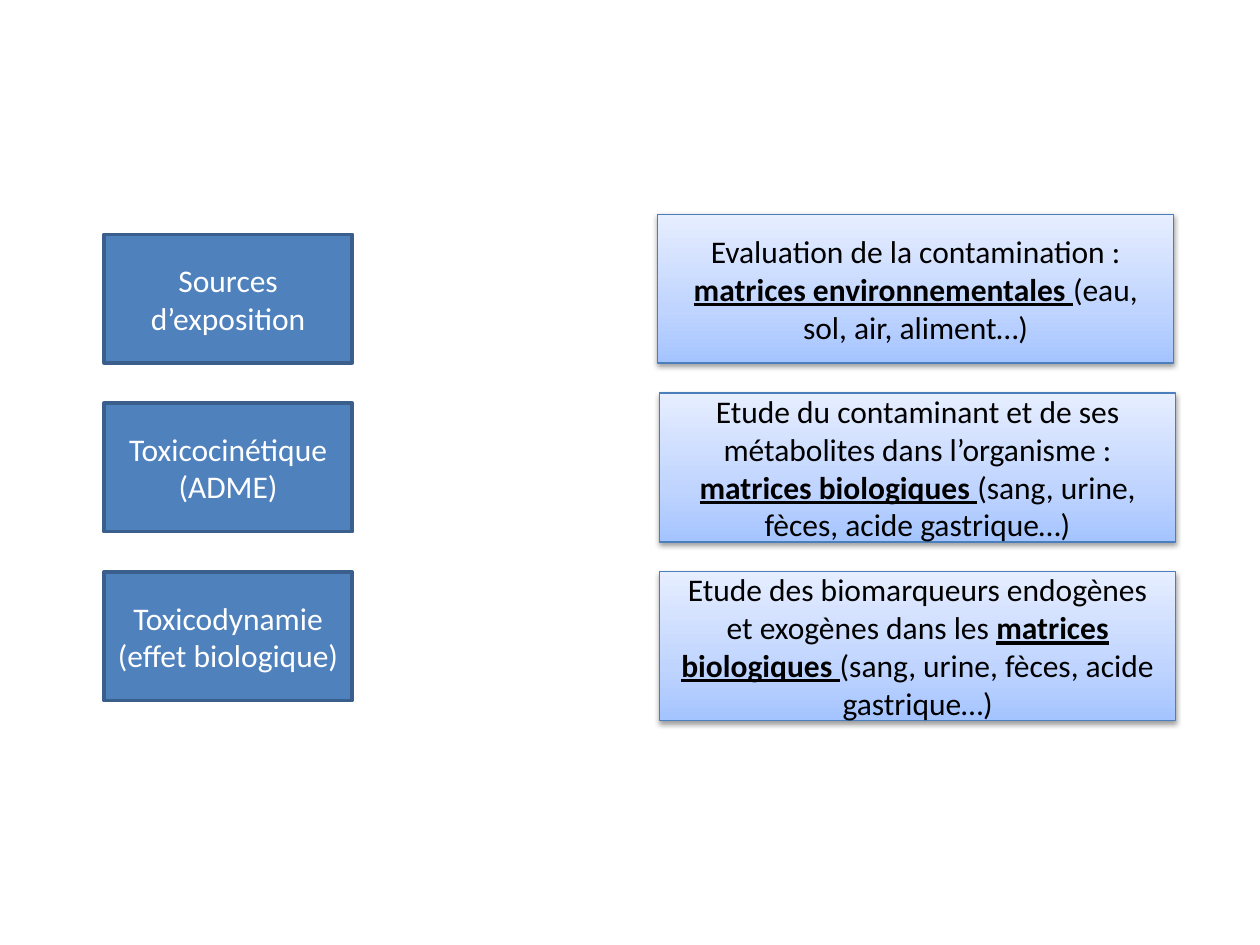
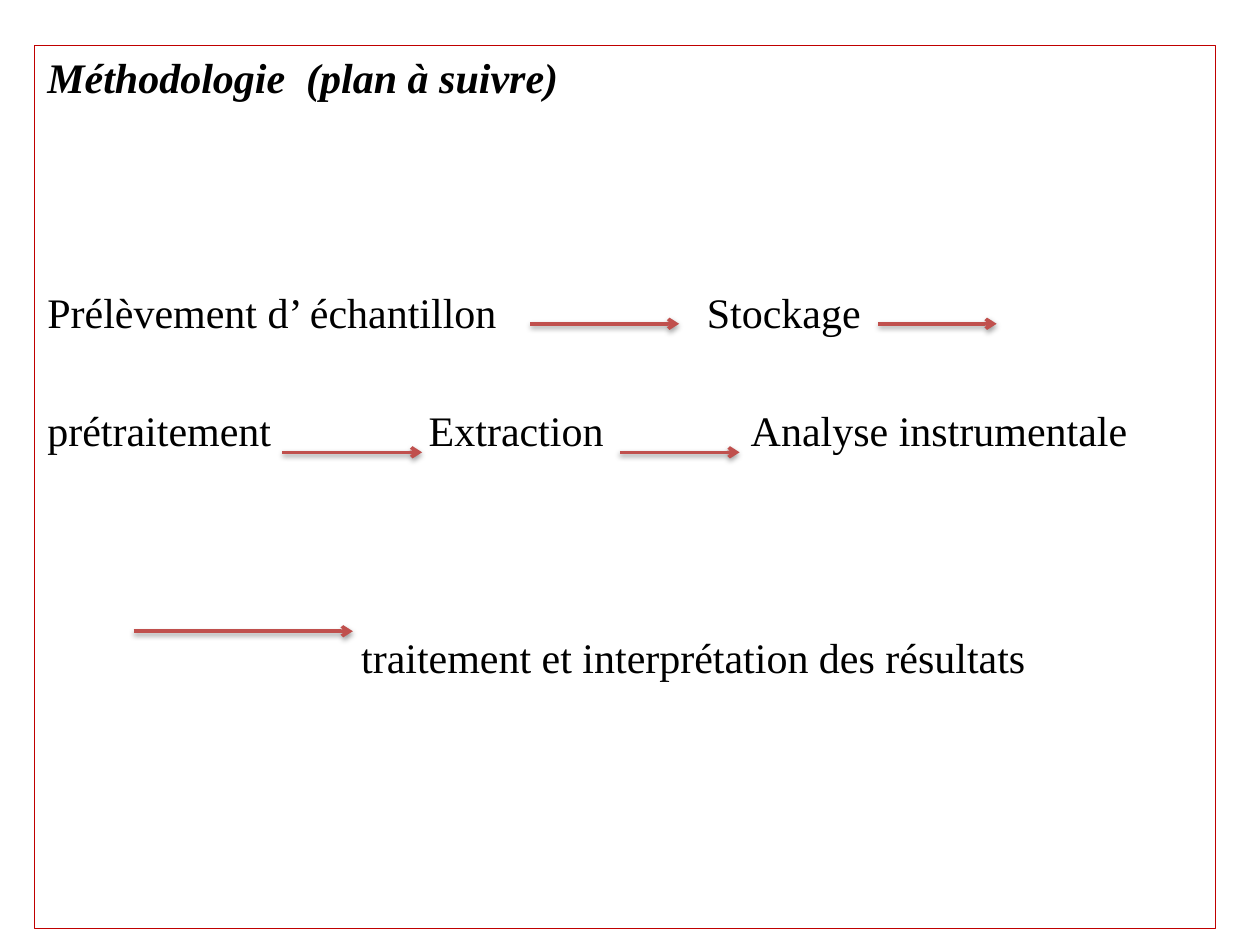
from dataclasses import dataclass

from pptx import Presentation
from pptx.dml.color import RGBColor
from pptx.enum.shapes import MSO_CONNECTOR, MSO_SHAPE
from pptx.enum.text import MSO_ANCHOR, MSO_AUTO_SIZE, PP_ALIGN
from pptx.oxml import parse_xml
from pptx.oxml.ns import nsdecls
from pptx.util import Inches, Pt

COLS, ROWS = 100, 75


@dataclass(frozen=True)
class Theme:
    white: str = "FFFFFF"
    ink: str = "000000"
    blue: str = "4F81BD"
    navy: str = "3A5F8C"
    edge: str = "4B7EBC"
    red: str = "C00000"
    arrow: str = "C0504D"
    fade: tuple = ((0, "A4C4FF"), (35, "BFD4FF"), (100, "E6EEFF"))
    sans: str = "Calibri"
    serif: str = "Times New Roman"
    small: int = 18
    large: int = 24
    thin: float = 0.75
    thick: float = 2


@dataclass(frozen=True)
class Stage:
    name: str
    lead: str
    matrix: str
    samples: str
    left: float
    top: float


@dataclass(frozen=True)
class Step:
    words: tuple
    before: float = 0
    gaps: tuple = ()
    indent: float = 0
    head: bool = False


@dataclass(frozen=True)
class Arrow:
    start: float
    end: float
    row: float


THEME = Theme()
FLUIDS = "(sang, urine, fèces, acide gastrique…)"
STAGES = (
    Stage("Sources d’exposition", "Evaluation de la contamination : ",
          "matrices environnementales ", "(eau, sol, air, aliment…)", 52.2, 17),
    Stage("Toxicocinétique (ADME)",
          "Etude du contaminant et de ses métabolites dans l’organisme : ",
          "matrices biologiques ", FLUIDS, 52.36, 31.2),
    Stage("Toxicodynamie (effet biologique)",
          "Etude des biomarqueurs endogènes et exogènes dans les ",
          "matrices biologiques ", FLUIDS, 52.36, 45.36),
)
STEPS = (
    Step(("Méthodologie  (plan à suivre)",), head=True),
    Step(("Prélèvement d’ échantillon", "Stockage"), 105.6, (114,)),
    Step(("prétraitement", "Extraction", "Analyse instrumentale"), 38.4, (84, 78)),
    Step(("traitement et interprétation des résultats",), 101, indent=24.9),
)
ARROWS = (
    Arrow(42.1, 53.9, 25.7),
    Arrow(69.7, 79.1, 25.7),
    Arrow(22.4, 33.5, 35.9),
    Arrow(49.2, 58.7, 35.9),
    Arrow(10.6, 28, 50.1),
)

deck = Presentation()
deck.slide_width, deck.slide_height = Inches(10), Inches(7.5)


def col(count: float) -> int:
    return round(deck.slide_width * count / COLS)


def row(count: float) -> int:
    return round(deck.slide_height * count / ROWS)


def ink(font, face: str, size: int, color: str) -> None:
    font.name, font.size = face, Pt(size)
    font.color.rgb = RGBColor.from_string(color)


def stroke(line, color: str, width: float) -> None:
    line.color.rgb = RGBColor.from_string(color)
    line.width = Pt(width)


def shade(shape) -> None:
    shape._element.spPr.append(parse_xml(
        f'<a:effectLst {nsdecls("a")}><a:outerShdw blurRad="{Pt(3.1)}" '
        f'dist="{Pt(1.6)}" dir="5400000" rotWithShape="0">'
        f'<a:srgbClr val="{THEME.ink}"><a:alpha val="38000"/></a:srgbClr>'
        '</a:outerShdw></a:effectLst>'))


def blend(shape) -> None:
    stops = "".join(f'<a:gs pos="{at * 1000}"><a:srgbClr val="{color}"/></a:gs>'
                    for at, color in THEME.fade)
    shape._element.spPr.prstGeom.addnext(parse_xml(
        f'<a:gradFill {nsdecls("a")} rotWithShape="1"><a:gsLst>{stops}</a:gsLst>'
        '<a:lin ang="16200000" scaled="0"/></a:gradFill>'))


def card(slide, left: float, top: float, width: float, height: float,
         parts: tuple, color: str):
    shape = slide.shapes.add_shape(MSO_SHAPE.RECTANGLE, col(left), row(top),
                                   col(width), row(height))
    frame = shape.text_frame
    frame.word_wrap = True
    frame.vertical_anchor = MSO_ANCHOR.MIDDLE
    para = frame.paragraphs[0]
    para.alignment = PP_ALIGN.CENTER
    for place, part in enumerate(parts):
        run = para.add_run()
        run.text = part
        ink(run.font, THEME.sans, THEME.small, color)
        if place == 1:
            run.font.bold = run.font.underline = True
    return shape


def draw_stage(slide, stage: Stage, index: int) -> None:
    label = card(slide, 8.26, 18.6 + 13.4 * index, 19.7, 10.2,
                 (stage.name,), THEME.white)
    label.fill.solid()
    label.fill.fore_color.rgb = RGBColor.from_string(THEME.blue)
    stroke(label.line, THEME.navy, THEME.thick)
    label.shadow.inherit = False

    study = card(slide, stage.left, stage.top, 40.94, 11.82,
                 (stage.lead, stage.matrix, stage.samples), THEME.ink)
    stroke(study.line, THEME.edge, THEME.thin)
    blend(study)
    shade(study)


def add_word(para, text: str, head: bool, space: float = 0) -> None:
    run = para.add_run()
    run.text = text
    ink(run.font, THEME.serif, THEME.large, THEME.ink)
    run.font.bold = run.font.italic = head
    if space:
        run._r.get_or_add_rPr().set("spc", str(round(space * 100)))


def write_step(para, step: Step) -> None:
    props = para._p.get_or_add_pPr()
    props.set("marL", str(col(step.indent)))
    props.set("indent", "0")
    props.append(parse_xml(f'<a:buNone {nsdecls("a")}/>'))
    para.space_before = Pt(step.before)
    add_word(para, step.words[0], step.head)
    for gap, word in zip(step.gaps, step.words[1:]):
        add_word(para, " ", step.head, gap)
        add_word(para, word, step.head)


def draw_arrow(slide, arrow: Arrow) -> None:
    line = slide.shapes.add_connector(MSO_CONNECTOR.STRAIGHT, col(arrow.start),
                                      row(arrow.row), col(arrow.end), row(arrow.row))
    stroke(line.line, THEME.arrow, THEME.thick)
    line.line._get_or_add_ln().append(
        parse_xml(f'<a:tailEnd {nsdecls("a")} type="arrow"/>'))
    shade(line)


def build_stages() -> None:
    slide = deck.slides.add_slide(deck.slide_layouts[6])
    for index, stage in enumerate(STAGES):
        draw_stage(slide, stage, index)


def build_method() -> None:
    slide = deck.slides.add_slide(deck.slide_layouts[1])
    title = slide.shapes.title._element
    title.getparent().remove(title)
    body = slide.placeholders[1]
    body.left, body.top = col(2.76), row(3.6)
    body.width, body.height = col(93.7), row(70.1)
    stroke(body.line, THEME.red, THEME.thin)
    frame = body.text_frame
    frame.auto_size = MSO_AUTO_SIZE.NONE
    frame.margin_top = row(0.5)
    for index, step in enumerate(STEPS):
        write_step(frame.add_paragraph() if index else frame.paragraphs[0], step)
    for arrow in ARROWS:
        draw_arrow(slide, arrow)


def main() -> None:
    build_stages()
    build_method()
    deck.save("out.pptx")


if __name__ == "__main__":
    main()
